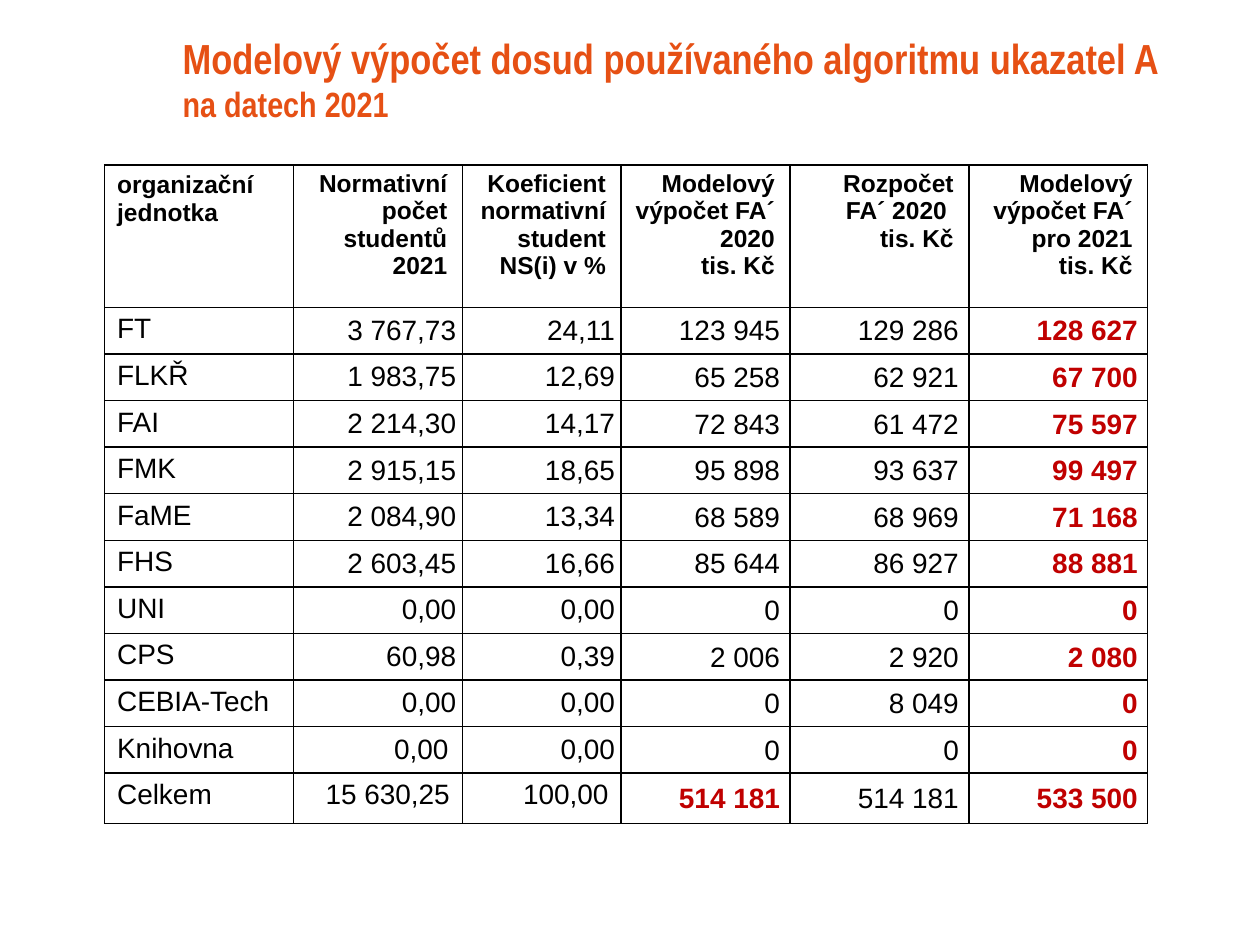
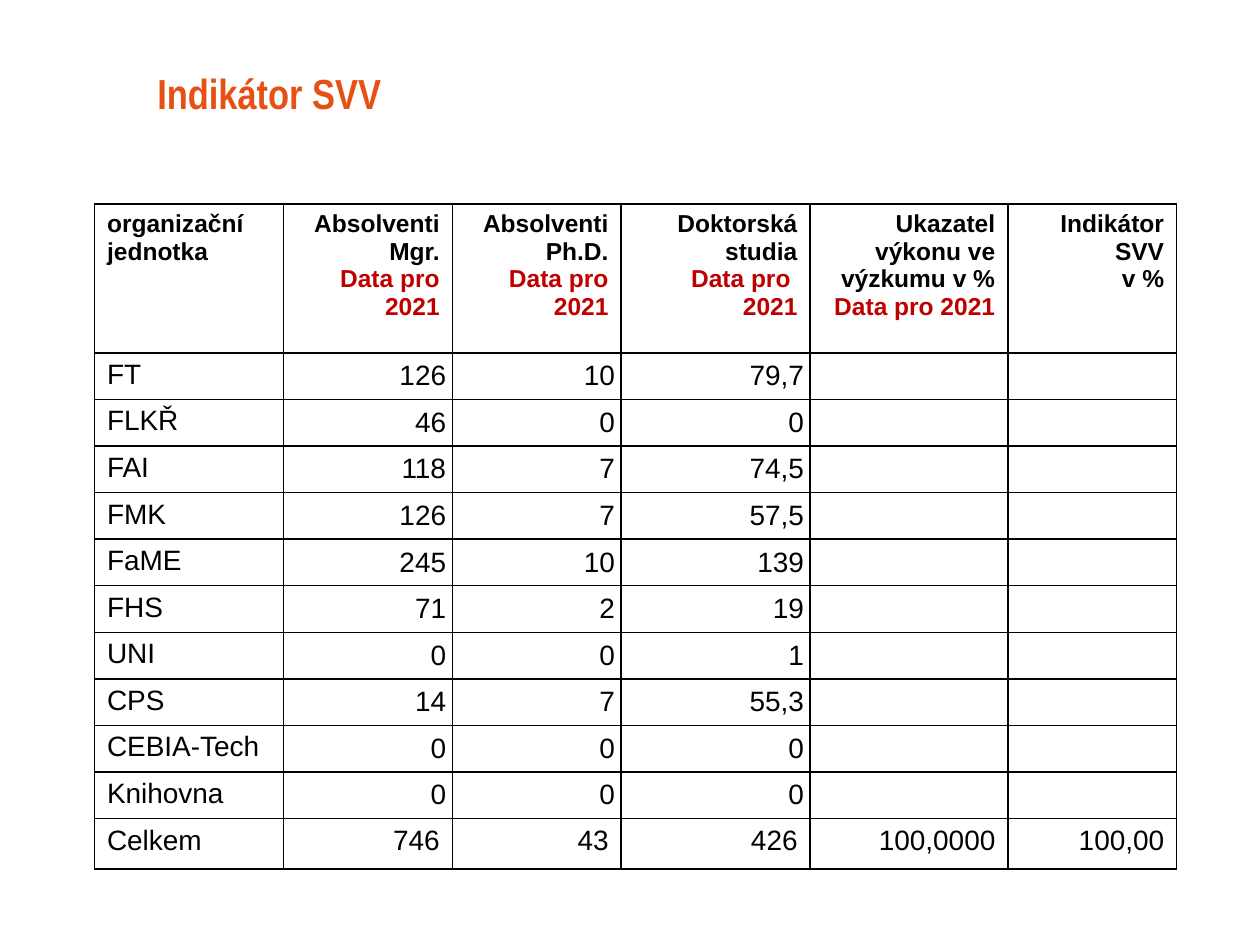
from lxml import etree
from pptx import Presentation
from pptx import util as u
from pptx.dml.color import RGBColor
from pptx.enum import text
from pptx.oxml import ns

PX = 9144  # EMU in one px, 100 px to the inch
ORANGE = RGBColor(0xE6, 0x50, 0x14)
RED = RGBColor(0xC0, 0x00, 0x00)
BLACK = RGBColor(0x00, 0x00, 0x00)

# Insets: left, top, right, bottom
WIDE = (10, 5, 10, 5)
TIGHT = (5, 0, 5, 0)
MONEY = (1, 1, 8, 0)
MONEY_HEADER = (0, 4, 12, 0)

TOP, MIDDLE = text.MSO_ANCHOR.TOP, text.MSO_ANCHOR.MIDDLE
LEFT, RIGHT = text.PP_ALIGN.LEFT, text.PP_ALIGN.RIGHT

UNITS = ["FT", "FLKŘ", "FAI", "FMK", "FaME", "FHS", "UNI", "CPS",
         "CEBIA-Tech", "Knihovna", "Celkem"]
UNIT_HEADER = (["organizační jednotka"], [])

# Each heading: black lines, then red lines
BUDGET_HEADERS = [
    UNIT_HEADER,
    (["Normativní počet studentů 2021"], []),
    (["Koeficient normativní student NS(i) v %"], []),
    (["Modelový výpočet FA´", "2020", "tis. Kč"], []),
    (["Rozpočet", "FA´ 2020 ", "tis. Kč"], []),
    (["Modelový výpočet FA´ pro 2021", "tis. Kč"], []),
]
BUDGET_VALUES = [
    ["3 767,73", "24,11", "123 945", "129 286", "128 627"],
    ["1 983,75", "12,69", "65 258", "62 921", "67 700"],
    ["2 214,30", "14,17", "72 843", "61 472", "75 597"],
    ["2 915,15", "18,65", "95 898", "93 637", "99 497"],
    ["2 084,90", "13,34", "68 589", "68 969", "71 168"],
    ["2 603,45", "16,66", "85 644", "86 927", "88 881"],
    ["0,00", "0,00", "0", "0", "0"],
    ["60,98", "0,39", "2 006", "2 920", "2 080"],
    ["0,00", "0,00", "0", "8 049", "0"],
    ["0,00 ", "0,00", "0", "0", "0"],
    ["15 630,25", "100,00", "514 181", "514 181", "533 500"],
]
RESEARCH_HEADERS = [
    UNIT_HEADER,
    (["Absolventi Mgr."], ["Data pro 2021"]),
    (["Absolventi Ph.D."], ["Data pro 2021"]),
    (["Doktorská studia"], ["Data pro ", "2021"]),
    (["Ukazatel výkonu ve výzkumu v %"], ["Data pro 2021"]),
    (["Indikátor SVV", "v %"], []),
]
RESEARCH_VALUES = [
    ["126", "10", "79,7", "", ""],
    ["46", "0", "0", "", ""],
    ["118", "7", "74,5", "", ""],
    ["126", "7", "57,5", "", ""],
    ["245", "10", "139", "", ""],
    ["71", "2", "19", "", ""],
    ["0", "0", "1", "", ""],
    ["14", "7", "55,3", "", ""],
    ["0", "0", "0", "", ""],
    ["0", "0", "0", "", ""],
    ["746", "43", "426", "100,0000", "100,00"],
]


def px(length):
    return u.Emu(length * PX)


def add_text(paragraph, content, size=16, color=BLACK, bold=False,
             font="Arial", align=LEFT):
    paragraph.alignment = align
    run = paragraph.add_run()
    run.text = content
    run.font.name = font
    run.font.size = u.Pt(size)
    run.font.bold = bold
    run.font.color.rgb = color


def set_insets(holder, insets):
    for side, inset in zip(("left", "top", "right", "bottom"), insets):
        setattr(holder, f"margin_{side}", px(inset))


def add_borders(cell):
    """Draw a black 1 pt line on all four sides of the cell."""
    properties = cell._tc.get_or_add_tcPr()
    for position, tag in enumerate(("a:lnL", "a:lnR", "a:lnT", "a:lnB")):
        line = etree.Element(ns.qn(tag), w=str(u.Pt(1)))
        fill = etree.SubElement(line, ns.qn("a:solidFill"))
        etree.SubElement(fill, ns.qn("a:srgbClr"), val=str(BLACK))
        properties.insert(position, line)


class Deck:
    def __init__(self):
        self.presentation = Presentation()
        self.presentation.slide_width = px(1000)
        self.presentation.slide_height = px(750)
        self.slide = None

    def new_slide(self):
        layout = self.presentation.slide_layouts[6]
        self.slide = self.presentation.slides.add_slide(layout)

    def title(self, heading, subtitle=None, insets=WIDE):
        box = self.slide.shapes.add_textbox(px(115), px(36), px(863), px(76))
        frame = box.text_frame
        frame.word_wrap = True
        frame.vertical_anchor = MIDDLE
        set_insets(frame, insets)
        style = {"font": "Arial Narrow", "color": ORANGE, "bold": True}
        paragraph = frame.paragraphs[0]
        add_text(paragraph, heading, size=24, **style)
        if subtitle:
            paragraph.add_line_break()
            add_text(paragraph, subtitle, size=20, **style)

    def cell(self, cell, lines, insets, anchor=TOP, **style):
        """Fill a cell with (text, colour) lines, one paragraph each."""
        cell.fill.background()
        add_borders(cell)
        set_insets(cell, insets)
        cell.vertical_anchor = anchor
        frame = cell.text_frame
        for index, (content, color) in enumerate(lines):
            paragraph = frame.add_paragraph() if index else frame.paragraphs[0]
            if content:
                add_text(paragraph, content, color=color, **style)

    def table(self, left, top, widths, header_height, headers, values,
              money_columns=(), red_cells=()):
        heights = [header_height] + [37] * (len(UNITS) - 1) + [40]
        table = self.slide.shapes.add_table(
            len(heights), len(widths), px(left), px(top),
            px(sum(widths)), px(sum(heights))).table
        table.first_row = table.horz_banding = False
        for column, width in zip(table.columns, widths):
            column.width = px(width)
        for row, height in zip(table.rows, heights):
            row.height = px(height)

        for column, (black, red) in enumerate(headers):
            lines = [(line, BLACK) for line in black]
            lines += [(line, RED) for line in red]
            narrow = money_columns and column > 0
            self.cell(table.cell(0, column), lines,
                      MONEY_HEADER if narrow else WIDE, size=14, bold=True,
                      align=RIGHT if column else LEFT)

        for row, (unit, numbers) in enumerate(zip(UNITS, values), start=1):
            self.cell(table.cell(row, 0), [(unit, BLACK)], WIDE)
            for column, number in enumerate(numbers, start=1):
                if column in money_columns:
                    insets, anchor = MONEY, MIDDLE
                elif row == len(UNITS):
                    insets, anchor = WIDE, TOP
                else:
                    insets, anchor = TIGHT, MIDDLE
                is_red = (row, column) in red_cells
                self.cell(table.cell(row, column),
                          [(number, RED if is_red else BLACK)], insets,
                          anchor, bold=is_red, align=RIGHT)


def build_budget_slide(deck):
    deck.new_slide()
    deck.title("Modelový výpočet dosud používaného algoritmu ukazatel A",
               "na datech 2021", insets=(30, 5, 10, 28))
    total_row = len(UNITS)
    red_cells = {(row, 5) for row in range(1, total_row + 1)}
    red_cells.add((total_row, 3))
    deck.table(83, 131, [150, 134, 126, 134, 142, 142], 113,
               BUDGET_HEADERS, BUDGET_VALUES,
               money_columns=(3, 4, 5), red_cells=red_cells)


def build_research_slide(deck):
    deck.new_slide()
    deck.title("Indikátor SVV")
    deck.table(75, 162, [150, 134, 134, 150, 157, 134], 118,
               RESEARCH_HEADERS, RESEARCH_VALUES)


def main():
    deck = Deck()
    build_budget_slide(deck)
    build_research_slide(deck)
    deck.presentation.save("out.pptx")


if __name__ == "__main__":
    main()
